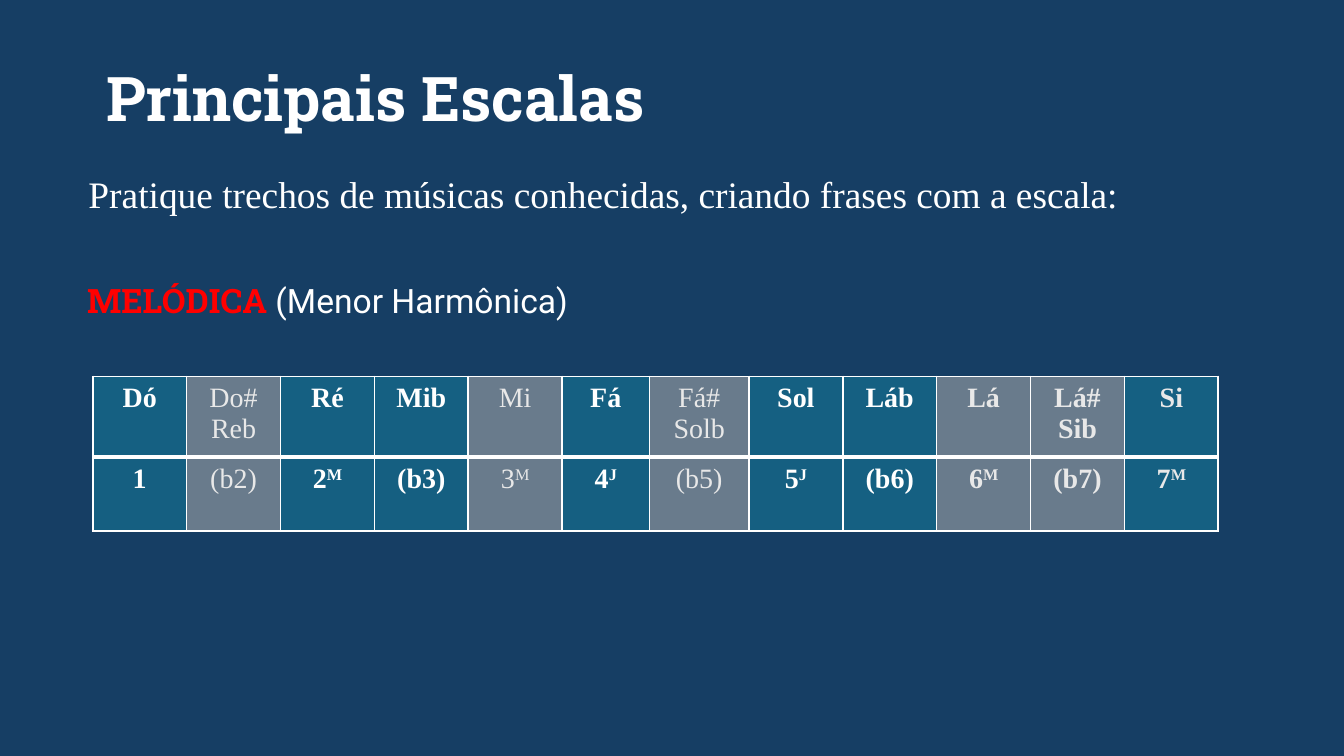
from lxml import etree
from pptx import Presentation
from pptx.dml.color import RGBColor
from pptx.enum.text import MSO_ANCHOR, MSO_AUTO_SIZE, PP_ALIGN
from pptx.oxml.ns import qn
from pptx.util import Pt

LEFT, CENTER = PP_ALIGN.LEFT, PP_ALIGN.CENTER
MIDDLE = MSO_ANCHOR.MIDDLE
NO_AUTOFIT = MSO_AUTO_SIZE.NONE

NAVY = RGBColor(0x16, 0x3E, 0x64)
TEAL = RGBColor(0x15, 0x60, 0x82)
GRAY = RGBColor(0xAE, 0xAE, 0xAE)
PALE = RGBColor(0xE8, 0xE8, 0xE8)
WHITE = RGBColor(0xFF, 0xFF, 0xFF)
RED = RGBColor(0xFF, 0x00, 0x00)

SERIF, SLAB, SANS = "Times New Roman", "Roboto Slab", "Roboto"

SCALE = [
    ("Dó", "1", "", "in"),
    ("Do#\nReb", "(b2)", "", "out"),
    ("Ré", "2", "M", "in"),
    ("Mib", "(b3)", "", "in"),
    ("Mi", "3", "M", "out"),
    ("Fá", "4", "J", "in"),
    ("Fá#\nSolb", "(b5)", "", "out"),
    ("Sol", "5", "J", "in"),
    ("Láb", "(b6)", "", "in"),
    ("Lá", "6", "M", "variant"),
    ("Lá#\nSib", "(b7)", "", "variant"),
    ("Si", "7", "M", "leading"),
]
ROLES = {
    "in": (TEAL, WHITE, True),
    "out": (GRAY, PALE, False),
    "variant": (GRAY, PALE, True),
    "leading": (TEAL, PALE, True),
}
COLUMN_WIDTHS = [50.3] * 5 + [46.8, 53.3] + [50.3] * 5
ROW_HEIGHTS = [43.2, 39.6]


def add_text(paragraph, text, font=SERIF, size=15, color=WHITE, bold=False,
             align=LEFT, raised=False):
    paragraph.alignment = align
    run = paragraph.add_run()
    run.text = text
    run.font.name = font
    run.font.size = Pt(size)
    run.font.bold = bold
    run.font.color.rgb = color
    if raised:
        run.font._element.set("baseline", "30000")


def add_box(slide, left, top, width, height):
    frame = slide.shapes.add_textbox(Pt(left), Pt(top), Pt(width), Pt(height)).text_frame
    frame.word_wrap = True
    return frame


def add_title(slide, text):
    title = slide.shapes.title
    title.left, title.top, title.width, title.height = Pt(49.7), Pt(15.1), Pt(620.6), Pt(78.5)
    frame = title.text_frame
    frame.vertical_anchor = MIDDLE
    frame.auto_size = NO_AUTOFIT
    paragraph = frame.paragraphs[0]
    paragraph.line_spacing = 0.9
    add_text(paragraph, text, font=SLAB, size=33, bold=True)


def set_borders(cell, **widths):
    properties = cell._tc.get_or_add_tcPr()
    for position, (side, width) in enumerate(widths.items()):
        line = etree.Element(qn(f"a:ln{side}"), w=str(Pt(width)))
        fill = etree.SubElement(line, qn("a:solidFill"))
        etree.SubElement(fill, qn("a:srgbClr"), val=str(WHITE))
        properties.insert(position, line)


def fill_cell(cell, color, opacity):
    cell.fill.solid()
    cell.fill.fore_color.rgb = color
    if opacity < 100:
        swatch = cell._tc.tcPr.find(f".//{qn('a:srgbClr')}")
        etree.SubElement(swatch, qn("a:alpha"), val=str(opacity * 1000))


def add_scale_table(slide):
    frame = slide.shapes.add_table(2, len(SCALE), Pt(49.7), Pt(201.6),
                                   Pt(sum(COLUMN_WIDTHS)), Pt(sum(ROW_HEIGHTS)))
    table = frame.table
    table.horz_banding = False
    table.first_row = False
    for row, height in zip(table.rows, ROW_HEIGHTS):
        row.height = Pt(height)
    for index, (names, degree, quality, role) in enumerate(SCALE):
        table.columns[index].width = Pt(COLUMN_WIDTHS[index])
        background, color, bold = ROLES[role]
        style = dict(color=color, bold=bold, align=CENTER)
        note_cell, degree_cell = table.cell(0, index), table.cell(1, index)

        note_opacity = 55 if background == GRAY else 100
        degree_opacity = 98 if background == TEAL and index < 8 else note_opacity
        fill_cell(note_cell, background, note_opacity)
        fill_cell(degree_cell, background, degree_opacity)
        set_borders(note_cell, L=1, R=1, T=1, B=3)
        set_borders(degree_cell, L=1, R=1, T=3, B=1)

        notes = note_cell.text_frame
        for number, name in enumerate(names.split("\n")):
            paragraph = notes.add_paragraph() if number else notes.paragraphs[0]
            add_text(paragraph, name, **style)
        paragraph = degree_cell.text_frame.paragraphs[0]
        add_text(paragraph, degree, **style)
        if quality:
            add_text(paragraph, quality, raised=True, **style)


def main():
    presentation = Presentation()
    presentation.slide_width, presentation.slide_height = Pt(720), Pt(405)
    slide = presentation.slides.add_slide(presentation.slide_layouts[5])
    slide.background.fill.solid()
    slide.background.fill.fore_color.rgb = NAVY

    add_title(slide, "Principais Escalas")

    instruction = add_box(slide, 40.3, 86.4, 648.7, 208.1)
    instruction.margin_top = Pt(5.5)
    add_text(instruction.paragraphs[0],
             "Pratique trechos de músicas conhecidas, criando frases com a escala:", size=20)

    add_scale_table(slide)

    scale_name = add_box(slide, 39.6, 146.2, 324.7, 28.8).paragraphs[0]
    add_text(scale_name, "MELÓDICA ", font=SLAB, size=18, color=RED, bold=True)
    add_text(scale_name, "(Menor Harmônica)", font=SANS, size=18)

    presentation.save("out.pptx")


if __name__ == "__main__":
    main()
